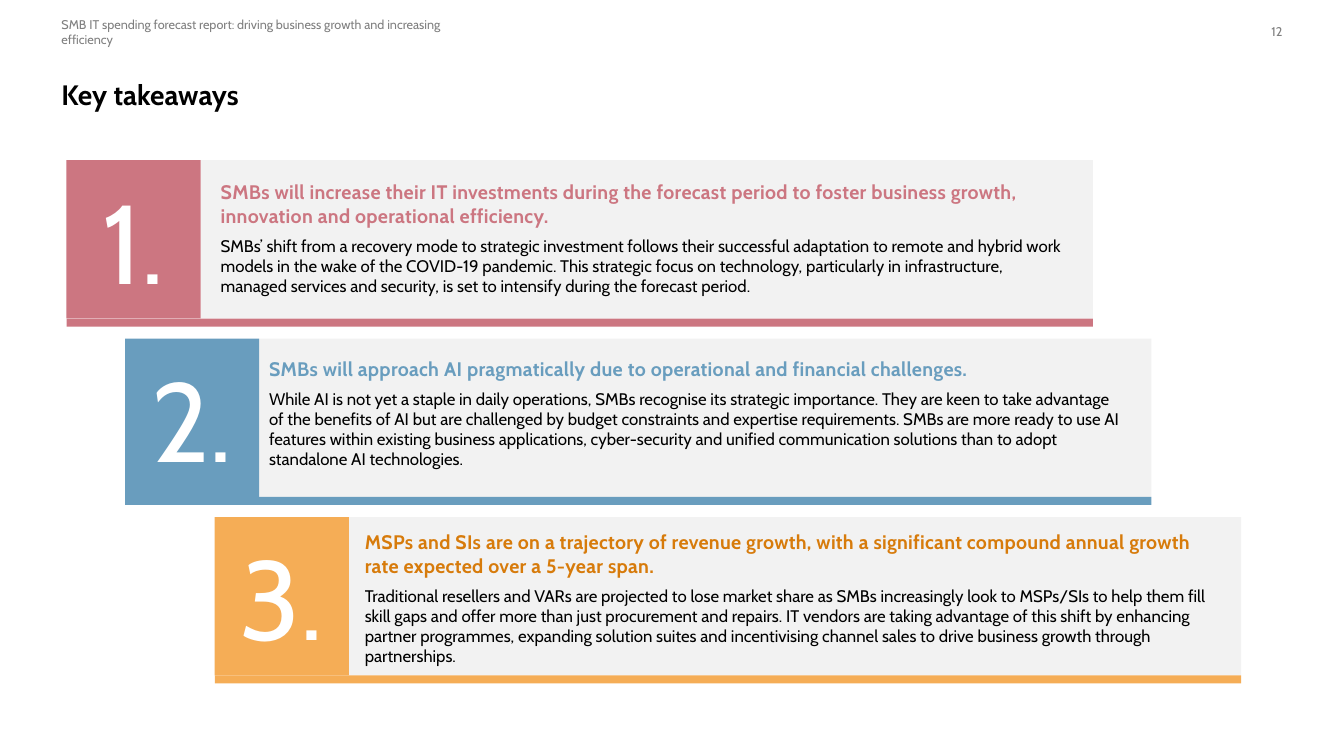
"""Build the key takeaways slide with three stepped, numbered panels."""
from dataclasses import dataclass

from pptx import Presentation
from pptx.dml.color import RGBColor
from pptx.enum.shapes import MSO_SHAPE
from pptx.enum.text import MSO_ANCHOR, PP_ALIGN
from pptx.util import Inches, Pt


@dataclass(frozen=True)
class Theme:
    font: str = "Cabin"
    black: str = "000000"
    white: str = "FFFFFF"
    grey: str = "7F7F7F"
    panel: str = "F2F2F2"
    small: int = 9
    body: int = 12
    head: int = 14
    title: int = 20
    digit: int = 80


@dataclass(frozen=True)
class Point:
    left: float
    fill: str
    ink: str
    text_left: float
    text_top: float
    text_high: float
    head: str
    body: str


THEME = Theme()
TOP, PITCH = 1.59, 1.77
WIDE, HIGH = 10.18, 1.57
TILE, BAR = 1.33, 0.08
TEXT_WIDE = 8.64

POINTS = [
    Point(0.66, "CC7681", "CC7681", 2.09, 1.74, 1.26,
          "SMBs will increase their IT investments during the forecast period to foster "
          "business growth, innovation and operational efficiency.",
          "SMBs’ shift from a recovery mode to strategic investment follows their successful "
          "adaptation to remote and hybrid work models in the wake of the COVID-19 pandemic. "
          "This strategic focus on technology, particularly in infrastructure, managed "
          "services and security, is set to intensify during the forecast period."),
    Point(1.24, "699DBE", "699DBE", 2.57, 3.49, 1.23,
          "SMBs will approach AI pragmatically due to operational and financial challenges.",
          "While AI is not yet a staple in daily operations, SMBs recognise its strategic "
          "importance. They are keen to take advantage of the benefits of AI but are "
          "challenged by budget constraints and expertise requirements. SMBs are more ready "
          "to use AI features within existing business applications, cyber-security and "
          "unified communication solutions than to adopt standalone AI technologies."),
    Point(2.13, "F5AD56", "D77B0B", 3.52, 5.21, 1.46,
          "MSPs and SIs are on a trajectory of revenue growth, with a significant compound "
          "annual growth rate expected over a 5-year span.",
          "Traditional resellers and VARs are projected to lose market share as SMBs "
          "increasingly look to MSPs/SIs to help them fill skill gaps and offer more than "
          "just procurement and repairs. IT vendors are taking advantage of this shift by "
          "enhancing partner programmes, expanding solution suites and incentivising channel "
          "sales to drive business growth through partnerships."),
]


def write(para, text: str, *, size: int, color: str, bold: bool = False,
          align=PP_ALIGN.LEFT, after: float = 0, track: float = 0) -> None:
    """Add one formatted run of text to a paragraph."""
    para.alignment = align
    para.space_before = Pt(0)
    para.space_after = Pt(after)
    run = para.add_run()
    run.text = text
    font = run.font
    font.name, font.size, font.bold = THEME.font, Pt(size), bold
    font.color.rgb = RGBColor.from_string(color)
    if track:
        run._r.get_or_add_rPr().set("spc", str(round(track * 100)))


def block(slide, left: float, top: float, wide: float, high: float, fill: str):
    """Draw a plain filled rectangle."""
    shape = slide.shapes.add_shape(
        MSO_SHAPE.RECTANGLE, Inches(left), Inches(top), Inches(wide), Inches(high))
    shape.shadow.inherit = False
    shape.fill.solid()
    shape.fill.fore_color.rgb = RGBColor.from_string(fill)
    shape.line.fill.background()
    return shape


def edge(frame, wrap: bool) -> None:
    """Centre a frame vertically and clear its side insets."""
    frame.margin_left = frame.margin_right = 0
    frame.vertical_anchor = MSO_ANCHOR.MIDDLE
    frame.word_wrap = wrap


def label(slide, left: float, wide: float, text: str, align) -> None:
    """Place a small text in the page header."""
    box = slide.shapes.add_textbox(Inches(left), Inches(0.16), Inches(wide), Inches(0.31))
    edge(box.text_frame, False)
    write(box.text_frame.paragraphs[0], text, size=THEME.small, color=THEME.grey, align=align)


def heading(slide, text: str) -> None:
    """Move and fill the title placeholder."""
    title = slide.shapes.title
    title.left, title.top = Inches(0.61), Inches(0.51)
    title.width, title.height = Inches(12.12), Inches(0.83)
    edge(title.text_frame, True)
    para = title.text_frame.paragraphs[0]
    para.line_spacing = Pt(25)
    write(para, text, size=THEME.title, color=THEME.black, bold=True)


def takeaway(slide, rank: int, item: Point) -> None:
    """Draw one numbered panel with its text and base bar."""
    top = TOP + (rank - 1) * PITCH
    block(slide, item.left + TILE, top, WIDE - TILE, HIGH, THEME.panel)
    tile = block(slide, item.left, top, TILE, HIGH, item.fill)
    tile.text_frame.vertical_anchor = MSO_ANCHOR.MIDDLE
    write(tile.text_frame.paragraphs[0], f"{rank}.", size=THEME.digit,
          color=THEME.white, align=PP_ALIGN.CENTER)
    block(slide, item.left, top + HIGH, WIDE, BAR, item.fill)

    box = slide.shapes.add_textbox(Inches(item.text_left), Inches(item.text_top),
                                   Inches(TEXT_WIDE), Inches(item.text_high))
    frame = box.text_frame
    frame.word_wrap = True
    write(frame.paragraphs[0], item.head, size=THEME.head, color=item.ink,
          bold=True, after=6, track=0.2)
    write(frame.add_paragraph(), item.body, size=THEME.body, color=THEME.black, after=6)


def main() -> None:
    """Assemble and save the slide."""
    deck = Presentation()
    deck.slide_width, deck.slide_height = Inches(13.33), Inches(7.5)
    slide = deck.slides.add_slide(deck.slide_layouts.get_by_name("Title Only"))
    label(slide, 0.61, 3.97,
          "SMB IT spending forecast report: driving business growth and increasing efficiency",
          PP_ALIGN.LEFT)
    heading(slide, "Key takeaways")
    label(slide, 11.8, 0.92, "12", PP_ALIGN.RIGHT)
    for rank, item in enumerate(POINTS, 1):
        takeaway(slide, rank, item)
    deck.save("out.pptx")


if __name__ == "__main__":
    main()
